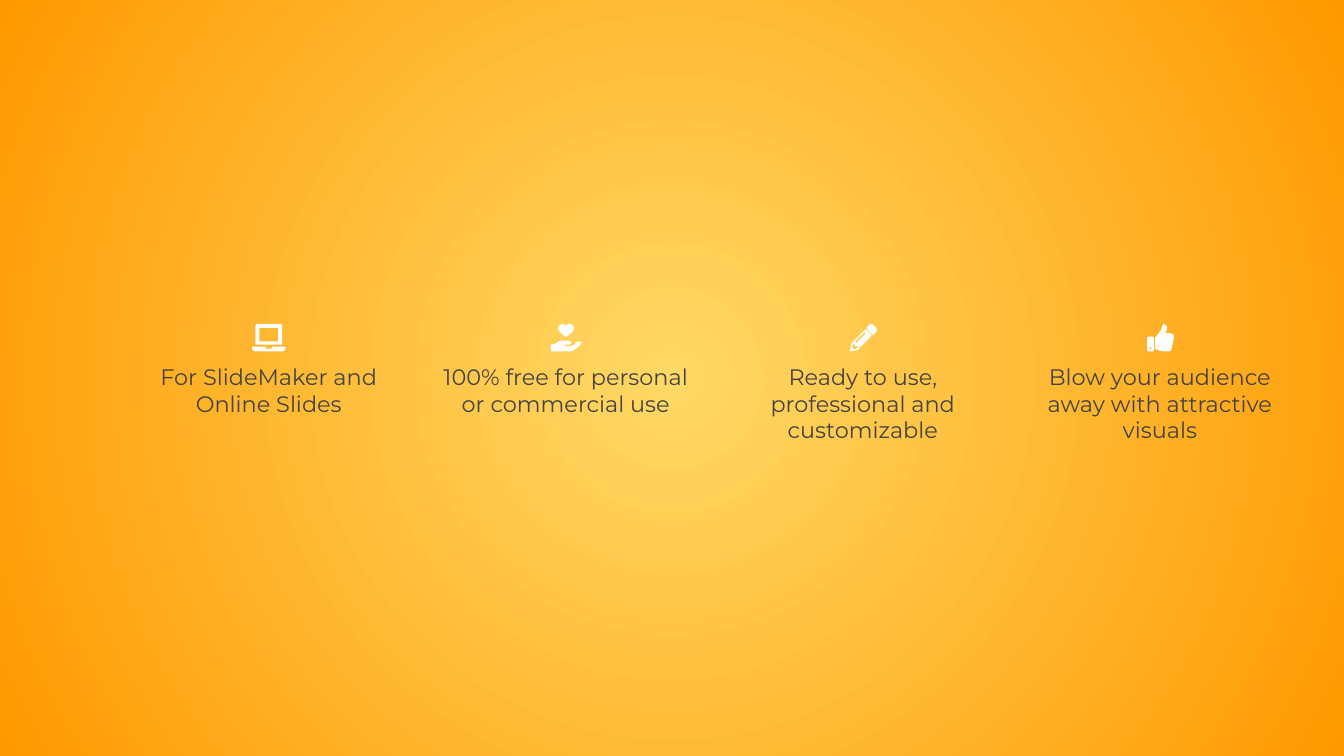
"""Build a slide of four icon-and-caption features on a radial gradient."""
from dataclasses import dataclass

from lxml import etree
from pptx import Presentation
from pptx.dml.color import RGBColor
from pptx.enum.text import PP_ALIGN
from pptx.oxml.ns import qn
from pptx.util import Pt

CENTER = PP_ALIGN.CENTER
PX = 4572
COLORS = {"glow": "FFD966", "edge": "FF9900", "text": "434343", "icon": "FFFFFF"}
FONT = "Montserrat"
LEFT, PITCH = 215, 442
ICON_TOP, CAPTION_TOP = 482, 540
CAPTION_W, CAPTION_H = 370, 140

Outline = list[tuple[int, int]]


@dataclass(frozen=True)
class Feature:
    caption: str
    outlines: list[Outline]


def box(x1: int, y1: int, x2: int, y2: int) -> Outline:
    return [(x1, y1), (x2, y1), (x2, y2), (x1, y2)]


LAPTOP = [
    box(-14, 6, 14, 26),
    [(-17, 0), (17, 0), (19, 1), (20, 3), (20, 31), (-20, 31), (-20, 3), (-19, 1)],
    [(-25, 34), (-5, 34), (-4, 37), (4, 37), (5, 34), (25, 34), (25, 37),
     (23, 40), (20, 41), (-20, 41), (-23, 40), (-25, 37)],
]
HEART_IN_HAND = [
    [(-6, 0), (-9, 2), (-11, 5), (-11, 8), (-9, 12), (0, 20), (10, 12), (12, 8),
     (12, 5), (10, 2), (7, 0), (4, 0), (0, 3), (-3, 0)],
    [(-6, 25), (-11, 26), (-16, 30), (-21, 30), (-22, 31), (-22, 40), (-21, 41),
     (8, 41), (11, 40), (22, 31), (23, 28), (21, 26), (18, 26), (11, 32),
     (8, 33), (-1, 33), (-2, 32), (-1, 31), (6, 31), (8, 29), (8, 27), (6, 25)],
]
PENCIL = [
    [(12, 0), (10, 1), (6, 5), (6, 8), (14, 16), (16, 16), (20, 12), (21, 9),
     (20, 6), (15, 1)],
    [(3, 13), (4, 15), (-9, 28), (-11, 28), (-11, 26), (2, 13)],
    [(-12, 30), (-12, 33), (-8, 33), (-8, 36), (-13, 38), (-16, 35), (-14, 30)],
    [(4, 8), (-17, 29), (-19, 39), (-18, 41), (-8, 39), (13, 18), (13, 17)],
]
THUMB_UP = [
    [(-14, 34), (-12, 36), (-14, 38), (-16, 36)],
    [(-18, 19), (-10, 19), (-9, 20), (-9, 40), (-10, 41), (-18, 41), (-19, 40),
     (-19, 20)],
    [(6, 0), (4, 2), (2, 9), (-1, 13), (-5, 18), (-7, 20), (-7, 37), (-5, 38),
     (0, 40), (6, 41), (14, 41), (17, 39), (18, 36), (18, 33), (20, 29),
     (20, 25), (21, 22), (21, 18), (19, 15), (16, 14), (8, 14), (10, 10),
     (11, 6), (10, 3), (8, 1)],
]
FEATURES = [
    Feature("For SlideMaker and Online Slides", LAPTOP),
    Feature("100% free for personal or commercial use", HEART_IN_HAND),
    Feature("Ready to use, professional and customizable", PENCIL),
    Feature("Blow your audience away with attractive visuals", THUMB_UP),
]


def rgb(name: str) -> RGBColor:
    return RGBColor.from_string(COLORS[name])


def fill_background(slide) -> None:
    fill = slide.background.fill
    fill.gradient()
    for stop, name in zip(fill.gradient_stops, ("glow", "edge")):
        stop.color.rgb = rgb(name)
    grad = slide.element.find(".//" + qn("a:gradFill"))
    grad.remove(grad.find(qn("a:lin")))
    circle = etree.SubElement(grad, qn("a:path"), {"path": "circle"})
    etree.SubElement(circle, qn("a:fillToRect"), dict.fromkeys("ltrb", "50000"))


def write_text(tf, text: str, *, size: int, color: str, align: PP_ALIGN) -> None:
    tf.word_wrap = True
    tf.margin_left = tf.margin_top = tf.margin_right = tf.margin_bottom = 0
    p = tf.paragraphs[0]
    p.alignment = align
    r = p.add_run()
    r.text = text
    r.font.name = FONT
    r.font.size = Pt(size)
    r.font.color.rgb = rgb(color)


def draw_icon(shapes, outlines: list[Outline], center: int, top: int) -> None:
    placed = [[(center + x, top + y) for x, y in outline] for outline in outlines]
    builder = shapes.build_freeform(*placed[0][0], scale=PX)
    for i, points in enumerate(placed):
        if i:
            builder.move_to(*points[0])
        builder.add_line_segments(points[1:], close=True)
    sp = builder.convert_to_shape()
    sp.shadow.inherit = False
    sp.fill.solid()
    sp.fill.fore_color.rgb = rgb("icon")
    sp.line.fill.background()


def draw_feature(slide, feature: Feature, left: int) -> None:
    shapes = slide.shapes.add_group_shape().shapes
    sp = shapes.add_textbox(left * PX, CAPTION_TOP * PX, CAPTION_W * PX, CAPTION_H * PX)
    write_text(sp.text_frame, feature.caption, size=12, color="text", align=CENTER)
    draw_icon(shapes, feature.outlines, left + CAPTION_W // 2, ICON_TOP)


def main() -> None:
    prs = Presentation()
    prs.slide_width, prs.slide_height = 2000 * PX, 1125 * PX
    slide = prs.slides.add_slide(prs.slide_layouts[6])
    fill_background(slide)
    for i, feature in enumerate(FEATURES):
        draw_feature(slide, feature, LEFT + i * PITCH)
    prs.save("out.pptx")


if __name__ == "__main__":
    main()
